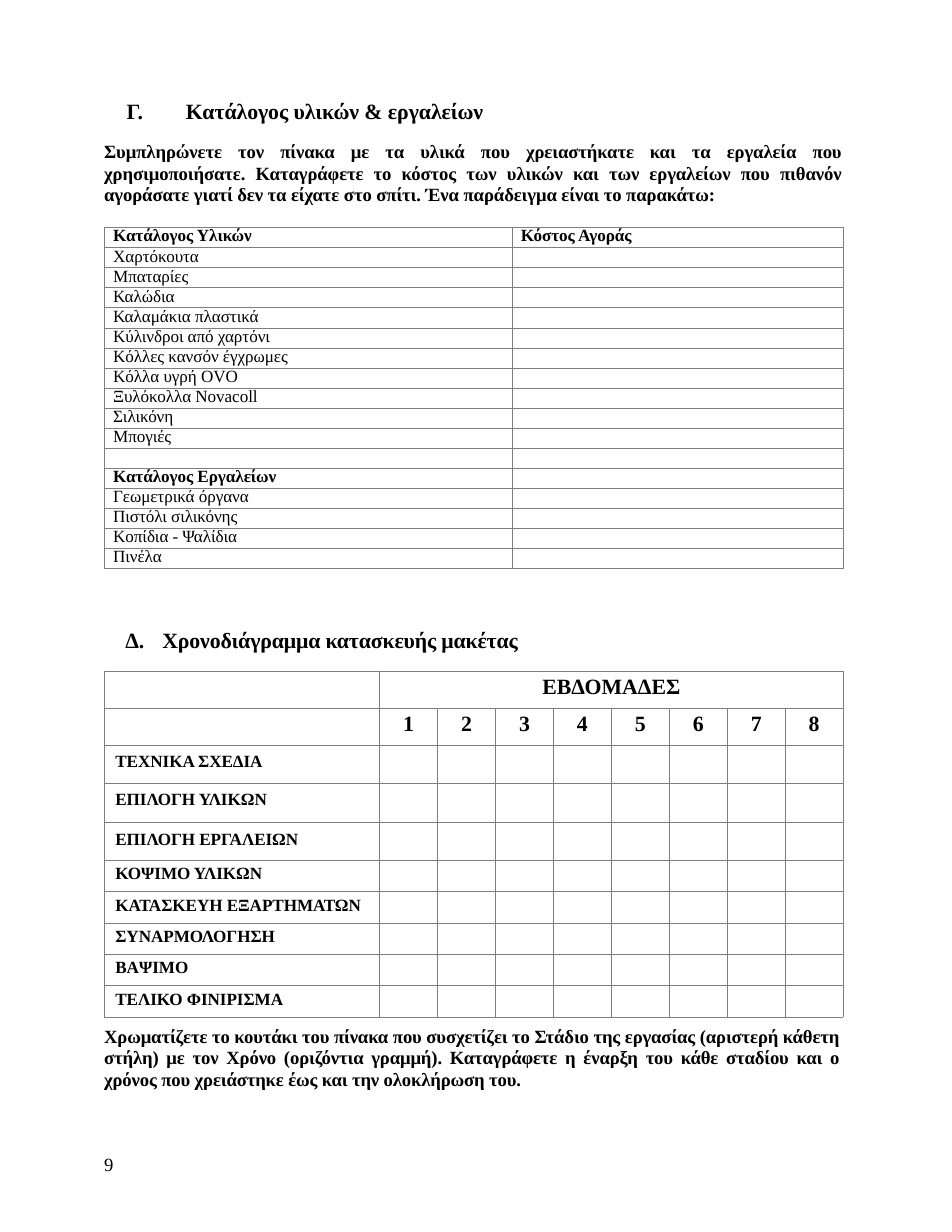
from lxml.etree import SubElement
from pptx import Presentation
from pptx.dml.color import RGBColor
from pptx.enum.text import MSO_ANCHOR as Anchor, MSO_AUTO_SIZE as AutoSize, PP_ALIGN as Align
from pptx.oxml.ns import qn
from pptx.util import Inches, Pt

FONT = "Times New Roman"
INK = "000000"
RULE = "7E7E7E"
LEFT = 0.93
WIDTH = 6.6
LABEL_WIDTH = 2.46
WEEKS = 8

MATERIALS = [
    "Χαρτόκουτα", "Μπαταρίες", "Καλώδια", "Καλαμάκια πλαστικά",
    "Κύλινδροι από χαρτόνι", "Κόλλες κανσόν έγχρωμες", "Κόλλα υγρή OVO",
    "Ξυλόκολλα Novacoll", "Σιλικόνη", "Μπογιές",
]
TOOLS = ["Γεωμετρικά όργανα", "Πιστόλι σιλικόνης", "Κοπίδια - Ψαλίδια", "Πινέλα"]
STAGES = [
    "ΤΕΧΝΙΚΑ ΣΧΕΔΙΑ", "ΕΠΙΛΟΓΗ ΥΛΙΚΩΝ", "ΕΠΙΛΟΓΗ ΕΡΓΑΛΕΙΩΝ", "ΚΟΨΙΜΟ ΥΛΙΚΩΝ",
    "ΚΑΤΑΣΚΕΥΗ ΕΞΑΡΤΗΜΑΤΩΝ", "ΣΥΝΑΡΜΟΛΟΓΗΣΗ", "ΒΑΨΙΜΟ", "ΤΕΛΙΚΟ ΦΙΝΙΡΙΣΜΑ",
]
STAGE_HEIGHTS = [0.34, 0.35, 0.34] + [0.28] * 5
INTRO = (
    "Συμπληρώνετε τον πίνακα με τα υλικά που χρειαστήκατε και τα εργαλεία που "
    "χρησιμοποιήσατε. Καταγράφετε το κόστος των υλικών και των εργαλείων που πιθανόν "
    "αγοράσατε γιατί δεν τα είχατε στο σπίτι. Ένα παράδειγμα είναι το παρακάτω:"
)
CLOSING = (
    "Χρωματίζετε το κουτάκι του πίνακα που συσχετίζει το Στάδιο της εργασίας (αριστερή "
    "κάθετη στήλη) με τον Χρόνο (οριζόντια γραμμή). Καταγράφετε η έναρξη του κάθε σταδίου "
    "και ο χρόνος που χρειάστηκε έως και την ολοκλήρωση του."
)


def color(value):
    return RGBColor.from_string(value)


def apply(target, values):
    for name, value in values.items():
        setattr(target, name, value)


def write(para, text, size, bold=True, indent=0, hang=0, tracking=-5, **layout):
    apply(para, {"alignment": Align.LEFT, **layout})
    span = para.add_run()
    span.text = text
    apply(span.font, {"name": FONT, "size": Pt(size), "bold": bold})
    span.font.color.rgb = color(INK)
    span._r.get_or_add_rPr().set("spc", str(tracking))
    props = para._p.get_or_add_pPr()
    props.set("marL", str(Inches(indent + hang)))
    props.set("indent", str(Inches(-hang)))


def prepare_box(box, left, top, width, height, inset=0):
    apply(box, {"left": Inches(left), "top": Inches(top),
                "width": Inches(width), "height": Inches(height)})
    frame = box.text_frame
    apply(frame, {"margin_left": 0, "margin_right": 0, "margin_top": Inches(inset),
                  "margin_bottom": 0, "word_wrap": True,
                  "auto_size": AutoSize.NONE, "vertical_anchor": Anchor.TOP})
    return frame


def add_text(page, place, text, size, inset=0, **style):
    box = page.shapes.add_textbox(0, 0, 0, 0)
    write(prepare_box(box, *place, inset).paragraphs[0], text, size, **style)


def style_cell(cell):
    apply(cell, {"margin_left": 0, "margin_right": 0, "margin_top": 0, "margin_bottom": 0})
    props = cell._tc.get_or_add_tcPr()
    for side in ("lnL", "lnR", "lnT", "lnB"):
        line = SubElement(props, qn(f"a:{side}"), w=str(Pt(0.25)))
        fill = SubElement(line, qn("a:solidFill"))
        SubElement(fill, qn("a:srgbClr"), val=RULE)
    cell.fill.background()
    SubElement(cell.text_frame.paragraphs[0]._p, qn("a:endParaRPr"), sz="800")


def add_grid(page, top, widths, heights):
    frame = page.shapes.add_table(len(heights), len(widths), Inches(LEFT), Inches(top),
                                  Inches(WIDTH), Inches(sum(heights)))
    grid = frame.table
    apply(grid, {"first_row": False, "horz_banding": False})
    for column, width in zip(grid.columns, widths):
        column.width = Inches(width)
    for row, height in zip(grid.rows, heights):
        row.height = Inches(height)
        for cell in row.cells:
            style_cell(cell)
    return grid


def fill_cell(cell, text, size, inset=0, **style):
    cell.margin_top = Inches(inset)
    write(cell.text_frame.paragraphs[0], text, size, **style)


def add_supplies(page):
    headings = ["Κατάλογος Υλικών", "Κατάλογος Εργαλείων"]
    entries = [headings[0], *MATERIALS, "", headings[1], *TOOLS]
    grid = add_grid(page, 2.03, [3.64, WIDTH - 3.64], [3.05 / len(entries)] * len(entries))
    style = {"indent": 0.08, "line_spacing": Pt(11.8)}
    for row, entry in enumerate(entries):
        if entry:
            fill_cell(grid.cell(row, 0), entry, 11, bold=entry in headings, **style)
    fill_cell(grid.cell(0, 1), "Κόστος Αγοράς", 11, **style)


def add_schedule(page):
    week_width = (WIDTH - LABEL_WIDTH) / WEEKS
    grid = add_grid(page, 5.99, [LABEL_WIDTH] + [week_width] * WEEKS,
                    [0.33, 0.33] + STAGE_HEIGHTS)
    grid.cell(0, 1).merge(grid.cell(0, WEEKS))
    header = {"inset": 0.04, "alignment": Align.CENTER, "space_before": Pt(2.8), "tracking": 0}
    fill_cell(grid.cell(0, 1), "ΕΒΔΟΜΑΔΕΣ", 14, **header)
    for week in range(1, WEEKS + 1):
        fill_cell(grid.cell(1, week), str(week), 14, **header)
    for row, (stage, height) in enumerate(zip(STAGES, STAGE_HEIGHTS), 2):
        tall = height > 0.3
        fill_cell(grid.cell(row, 0), stage, 11, inset=0.07 if tall else 0.04,
                  indent=0.1, space_before=Pt(5.4 if tall else 3))


def add_intro(page):
    frame = prepare_box(page.shapes.title, 0.92, 0.86, 6.6, 0.99, 0.01)
    write(frame.paragraphs[0], "Γ.\tΚατάλογος υλικών & εργαλείων", 14,
          indent=0.21, hang=0.53, space_before=Pt(1))
    write(frame.add_paragraph(), INTRO, 12, indent=0.01, alignment=Align.JUSTIFY,
          line_spacing=Pt(13.8), space_before=Pt(11.2))


def main():
    deck = Presentation()
    apply(deck, {"slide_width": Inches(8.5), "slide_height": Inches(11)})
    page = deck.slides.add_slide(deck.slide_layouts[5])
    add_text(page, (0.89, 10.3, 0.25, 0.21), "9", 12, bold=False, indent=0.04,
             line_spacing=Pt(14.1))
    add_intro(page)
    add_supplies(page)
    add_text(page, (1.11, 5.59, 3.7, 0.26), "Δ.\tΧρονοδιάγραμμα κατασκευής μακέτας", 14,
             inset=0.01, indent=0.01, hang=0.33, space_before=Pt(1), tracking=-10)
    add_schedule(page)
    add_text(page, (0.92, 9.14, 6.58, 0.61), CLOSING, 12, inset=0.02, indent=0.01,
             alignment=Align.JUSTIFY, line_spacing=0.96, space_before=Pt(1.6), tracking=-8)
    deck.save("out.pptx")


if __name__ == "__main__":
    main()
